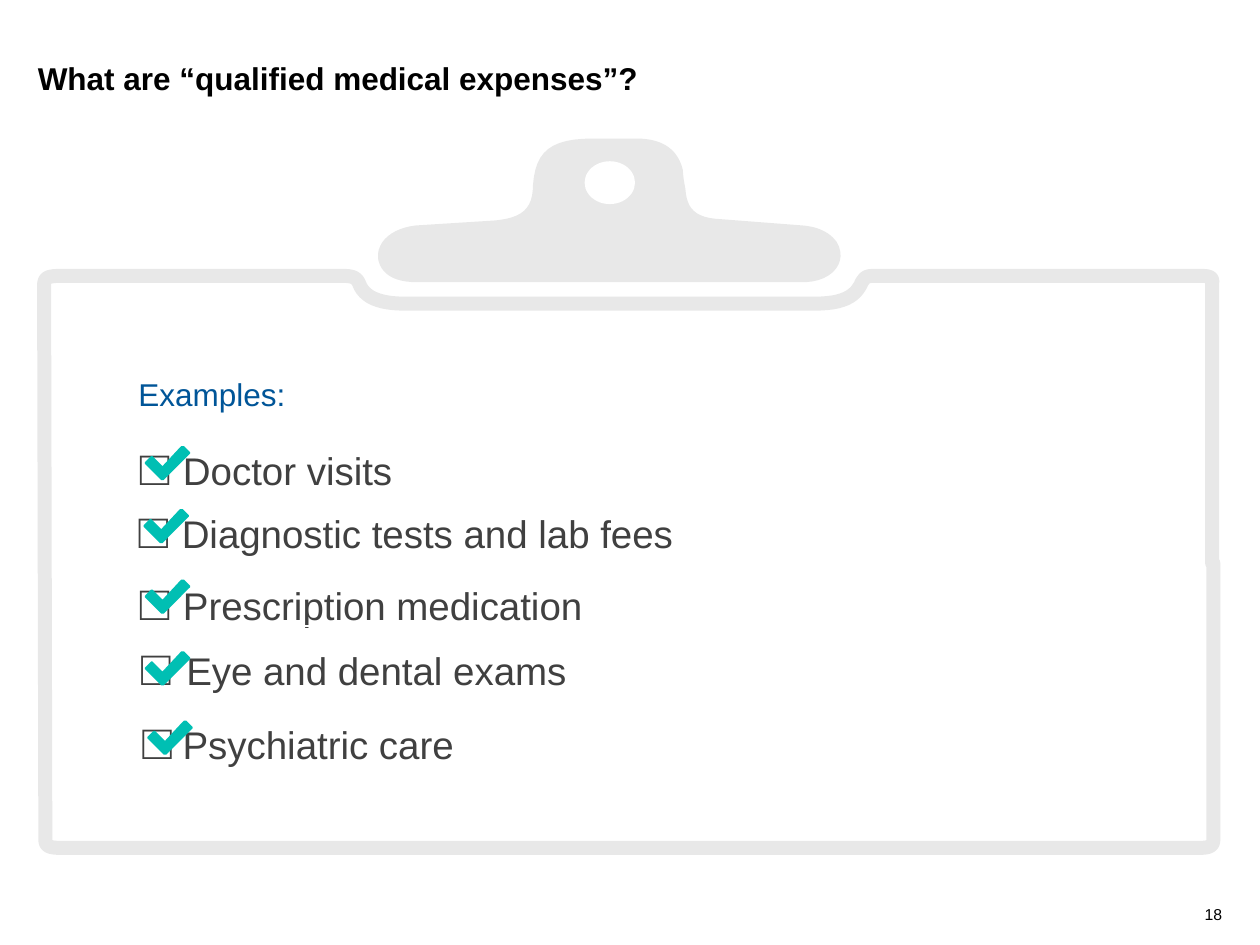
from dataclasses import dataclass

from pptx import Presentation
from pptx.dml.color import RGBColor
from pptx.enum.shapes import MSO_SHAPE
from pptx.enum.text import MSO_ANCHOR, PP_ALIGN
from pptx.util import Emu, Pt

PX = 9144  # EMU per px, 100 px to the inch
CURVE_STEPS = 12
FONT = "Arial"

BLACK = RGBColor(0x00, 0x00, 0x00)
WHITE = RGBColor(0xFF, 0xFF, 0xFF)
BOARD_GREY = RGBColor(0xE8, 0xE8, 0xE8)
HEADING_BLUE = RGBColor(0x00, 0x55, 0x98)
ITEM_GREY = RGBColor(0x40, 0x40, 0x40)
CHECK_TEAL = RGBColor(0x00, 0xBF, 0xB3)

OVAL = MSO_SHAPE.OVAL
TOP, MIDDLE, BOTTOM = MSO_ANCHOR.TOP, MSO_ANCHOR.MIDDLE, MSO_ANCHOR.BOTTOM
LEFT, RIGHT = PP_ALIGN.LEFT, PP_ALIGN.RIGHT

Point = tuple[float, float]
Segment = tuple[int, ...]  # 2 numbers: line to a point; 6 numbers: cubic curve

BOARD: list[Segment] = [
    (963, 447), (963, 666), (963, 671, 961, 673, 951, 673), (49, 673),
    (38, 673, 36, 671, 36, 666), (35, 227), (35, 220, 38, 219, 49, 219),
    (272, 219), (279, 219, 283, 220, 285, 225), (289, 236, 301, 241, 321, 241),
    (647, 241), (668, 241, 679, 236, 684, 224), (686, 221, 687, 219, 693, 219),
    (954, 219), (964, 219, 962, 223, 962, 226), (962, 447),
]
CLIP: list[Segment] = [
    (483, 224), (331, 224), (312, 224, 302, 217, 300, 205),
    (299, 191, 312, 181, 330, 179), (393, 175), (414, 173, 423, 166, 423, 147),
    (425, 120, 437, 110, 471, 110), (508, 110), (527, 111, 538, 119, 542, 135),
    (542, 139, 543, 145, 544, 150), (545, 166, 552, 173, 572, 174), (637, 179),
    (649, 180, 658, 184, 664, 192), (673, 207, 662, 223, 639, 224),
]
CHECK: list[Segment] = [
    (35, 4), (32, 1), (31, 0), (29, 0), (28, 1), (14, 16), (7, 9), (6, 8),
    (5, 8), (4, 9), (1, 12), (0, 13), (0, 14), (1, 15), (9, 23), (12, 26),
    (13, 27), (15, 27), (16, 26), (19, 23), (35, 7), (36, 6), (36, 5),
]


@dataclass(frozen=True)
class Run:
    text: str
    size: int
    color: RGBColor
    bold: bool = False


@dataclass(frozen=True)
class Label:
    left: int
    top: int
    width: int
    height: int
    run: Run
    inset: tuple[int, int] = (0, 0)
    anchor: MSO_ANCHOR = TOP
    align: PP_ALIGN = LEFT
    wrap: bool = True


@dataclass(frozen=True)
class Expense:
    left: int
    top: int
    check_left: int
    check_top: int
    name: str
    gap_size: int = 28


LABELS = [
    Label(30, 47, 700, 70, Run("What are “qualified medical expenses”?", 18, BLACK, True)),
    Label(100, 293, 138, 40, Run("Examples:", 18, HEADING_BLUE), (10, 5), wrap=False),
    Label(930, 715, 40, 18, Run("18", 9, BLACK), anchor=BOTTOM, align=RIGHT),
]
EXPENSES = [
    Expense(101, 340, 115, 354, "Doctor visits"),
    Expense(100, 390, 114, 404, "Diagnostic tests and lab fees"),
    Expense(101, 447, 115, 460, "Prescription medication"),
    Expense(102, 497, 115, 517, "Eye and dental exams", 32),
    Expense(103, 557, 117, 572, "Psychiatric care", 22),
]


def px(*lengths: float) -> list[Emu]:
    return [Emu(round(length * PX)) for length in lengths]


def flatten(segments: list[Segment]) -> list[Point]:
    """Turn lines and cubic curves into the points of a polygon."""
    points: list[Point] = [segments[0]]
    for segment in segments[1:]:
        if len(segment) == 2:
            points.append(segment)
            continue
        controls = [points[-1], segment[0:2], segment[2:4], segment[4:6]]
        for step in range(1, CURVE_STEPS + 1):
            t = step / CURVE_STEPS
            weights = ((1 - t) ** 3, 3 * t * (1 - t) ** 2, 3 * t * t * (1 - t), t ** 3)
            points.append(tuple(
                sum(w * control[axis] for w, control in zip(weights, controls))
                for axis in (0, 1)
            ))
    return points


def paint(shape, fill: RGBColor, line: RGBColor | None = None, weight: int = 0) -> None:
    shape.shadow.inherit = False
    shape.fill.solid()
    shape.fill.fore_color.rgb = fill
    if line is None:
        shape.line.fill.background()
    else:
        shape.line.color.rgb = line
        shape.line.width = Pt(weight)


def draw_outline(slide, segments: list[Segment], left: int = 0, top: int = 0):
    start, *rest = [tuple(px(x + left, y + top)) for x, y in flatten(segments)]
    builder = slide.shapes.build_freeform(*start, scale=1.0)
    builder.add_line_segments(rest, close=True)
    return builder.convert_to_shape()


def add_run(paragraph, run: Run) -> None:
    part = paragraph.add_run()
    part.text = run.text
    formats = {"name": FONT, "size": Pt(run.size), "bold": run.bold}
    for attribute, value in formats.items():
        setattr(part.font, attribute, value)
    part.font.color.rgb = run.color


def draw_label(slide, label: Label) -> None:
    box = slide.shapes.add_textbox(*px(label.left, label.top, label.width, label.height))
    side, edge = px(*label.inset)
    formats = {
        "margin_left": side, "margin_right": side,
        "margin_top": edge, "margin_bottom": edge,
        "vertical_anchor": label.anchor, "word_wrap": label.wrap,
    }
    for attribute, value in formats.items():
        setattr(box.text_frame, attribute, value)
    paragraph = box.text_frame.paragraphs[0]
    paragraph.alignment = label.align
    add_run(paragraph, label.run)


def draw_expense(slide, expense: Expense) -> None:
    table = slide.shapes.add_table(1, 1, *px(expense.left, expense.top, 806, 64)).table
    table.first_row = table.horz_banding = False
    cell = table.cell(0, 0)
    cell.fill.background()
    cell.vertical_anchor = MIDDLE
    for text, size in (("□", 28), (" ", expense.gap_size), (expense.name, 22)):
        add_run(cell.text_frame.paragraphs[0], Run(text, size, ITEM_GREY))


def main() -> None:
    presentation = Presentation()
    presentation.slide_width, presentation.slide_height = px(1000, 750)
    slide = presentation.slides.add_slide(presentation.slide_layouts[6])

    paint(draw_outline(slide, BOARD), WHITE, BOARD_GREY, 8)
    paint(draw_outline(slide, CLIP), BOARD_GREY)
    paint(slide.shapes.add_shape(OVAL, *px(464, 128, 40, 34)), WHITE)
    for label in LABELS:
        draw_label(slide, label)
    for expense in EXPENSES:
        draw_expense(slide, expense)
    for expense in EXPENSES:
        paint(draw_outline(slide, CHECK, expense.check_left, expense.check_top), CHECK_TEAL)

    presentation.save("out.pptx")


if __name__ == "__main__":
    main()
